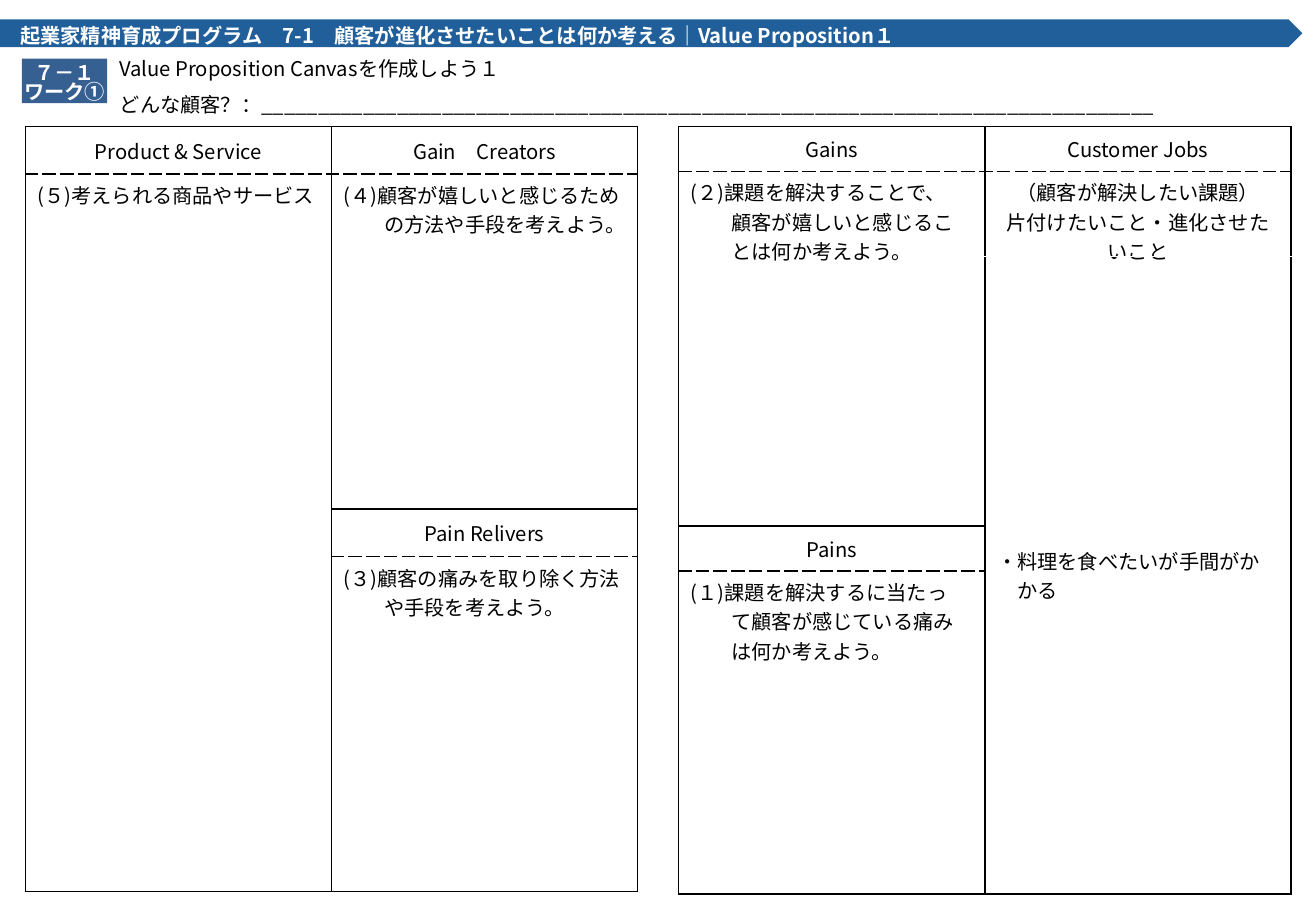
from lxml.etree import SubElement as Sub
from pptx import Presentation
from pptx.dml.color import RGBColor
from pptx.enum.shapes import MSO_SHAPE as Kind
from pptx.enum.text import MSO_ANCHOR as Anchor, PP_ALIGN as Align
from pptx.oxml.ns import qn
from pptx.util import Pt

FONT = "Noto Sans CJK JP"
SIZE = 12
BLACK, WHITE = "000000", "FFFFFF"
SIDES = {"l": "a:lnL", "r": "a:lnR", "t": "a:lnT", "b": "a:lnB"}
SOLID, DASH = "solid", "sysDash"
HEAD = {"l": SOLID, "r": SOLID, "t": SOLID, "b": DASH}
BODY = {"l": SOLID, "r": SOLID, "t": DASH, "b": SOLID}


def paint(item, tone):
    """Give a fill or a font colour its hex tone."""
    item.rgb = RGBColor.from_string(tone)


def write(frame, lines, tone=BLACK, bold=False, align=Align.LEFT, space=None):
    """Fill a frame; each line is a text with its left indent in points."""
    for i, (text, indent) in enumerate(lines):
        para = frame.paragraphs[0] if i == 0 else frame.add_paragraph()
        para.alignment = align
        if space:
            para.line_spacing = space
        if indent:
            props = para._p.get_or_add_pPr()
            props.set("marL", str(Pt(indent)))
            props.set("indent", "0")
        run = para.add_run()
        run.text = text
        run.font.size, run.font.bold, run.font.name = Pt(SIZE), bold, FONT
        paint(run.font.color, tone)
        Sub(run._r.get_or_add_rPr(), qn("a:ea"), typeface=FONT)


def place(shape, box):
    shape.left, shape.top, shape.width, shape.height = map(Pt, box)


def label(slide, kind, box, fill, lines, inset=0, **style):
    """Draw a filled shape with bold white text."""
    shape = slide.shapes.add_shape(kind, *map(Pt, box))
    shape.shadow.inherit = False
    shape.fill.solid()
    paint(shape.fill.fore_color, fill)
    shape.line.fill.background()
    frame = shape.text_frame
    frame.margin_left = Pt(inset)
    frame.margin_right = frame.margin_top = frame.margin_bottom = 0
    frame.vertical_anchor = Anchor.BOTTOM
    write(frame, lines, WHITE, True, **style)
    return frame


def banner(slide, box):
    label(slide, Kind.PENTAGON, box, "215F9A",
          [("起業家精神育成プログラム　7-1　顧客が進化させたいことは何か考える｜Value Proposition１", 0)],
          inset=SIZE)


def intro(slide, box):
    """Place the work badge, the title and the customer line."""
    left, top, width, height = box
    badge = label(slide, Kind.RECTANGLE, (left, top + 1.5, 50.5, 26.5), "376092",
                  [("７－１", 0), ("ワーク①", 0)], align=Align.CENTER, space=Pt(11))
    badge.word_wrap = False
    title = slide.shapes.title
    place(title, (left + 50.5, top, 542, 16.5))
    ask = slide.shapes.add_textbox(0, 0, 0, 0)
    place(ask, (left + 51, top + 20.3, width - 51, height - 20.3))
    for shape, text in ((title, "Value Proposition Canvasを作成しよう１"),
                        (ask, "どんな顧客？：" + "_" * 79)):
        frame = shape.text_frame
        frame.word_wrap = True
        frame.vertical_anchor = Anchor.MIDDLE
        write(frame, [(text, 0)], space=0.9)


def edge(cell, sides):
    """Draw black one-point borders on the named sides."""
    props = cell._tc.get_or_add_tcPr()
    for side, tag in SIDES.items():
        if side in sides:
            line = Sub(props, qn(tag), w=str(Pt(1)))
            fill = Sub(line, qn("a:solidFill"))
            Sub(fill, qn("a:srgbClr"), val=BLACK)
            Sub(line, qn("a:prstDash"), val=sides[side])


def canvas(slide, box, rows, cells):
    """Build a two-column grid of (row, col, span, lines, sides, align)."""
    frame = slide.shapes.add_table(len(rows), 2, *map(Pt, box))
    table = frame.table
    table.first_row = table.horz_banding = False
    for col in table.columns:
        col.width = Pt(box[2] / 2)
    for row, height in zip(table.rows, rows):
        row.height = Pt(height)
    for row, col, span, lines, sides, align in cells:
        cell = table.cell(row, col)
        if span > 1:
            cell.merge(table.cell(row + span - 1, col))
        middle = sides is not BODY
        cell.vertical_anchor = Anchor.MIDDLE if middle else Anchor.TOP
        write(cell.text_frame, lines, align=align)
        edge(cell, sides)
    for cell in table.iter_cells():
        cell.fill.background()


def head(row, col, text):
    return row, col, 1, [(text, 0)], HEAD, Align.CENTER


def body(row, col, span, first, *rest):
    """Describe a prompt whose later lines hang by two letters."""
    lines = [(first, 0)] + [(text, 2 * SIZE) for text in rest]
    return row, col, span, lines, BODY, Align.LEFT


def offer(slide, box):
    rows = [28.1, 198.7] * 2
    canvas(slide, box, rows, [
        head(0, 0, "Product & Service"),
        head(0, 1, "Gain　Creators"),
        body(1, 0, 3, "(５)考えられる商品やサービス"),
        body(1, 1, 1, "(４)顧客が嬉しいと感じるため", "の方法や手段を考えよう。"),
        head(2, 1, "Pain Relivers"),
        body(3, 1, 1, "(３)顧客の痛みを取り除く方法", "や手段を考えよう。"),
    ])


def client(slide, box):
    rows = [26.6, 49.7, 159.8, 26.6, 191.5]
    goal = [("（顧客が解決したい課題）", 0), ("片付けたいこと・進化させたいこと", 0)]
    job = [("・料理を食べたいが手間がか", 0), ("かる", SIZE)]
    upper = {"l": SOLID, "r": SOLID, "t": DASH}
    lower = {"l": SOLID, "r": SOLID, "b": SOLID}
    canvas(slide, box, rows, [
        head(0, 0, "Gains"),
        head(0, 1, "Customer Jobs"),
        body(1, 0, 2, "(２)課題を解決することで、", "顧客が嬉しいと感じるこ", "とは何か考えよう。"),
        (1, 1, 1, goal, upper, Align.CENTER),
        (2, 1, 3, job, lower, Align.LEFT),
        head(3, 0, "Pains"),
        body(4, 0, 1, "(１)課題を解決するに当たっ", "て顧客が感じている痛み", "は何か考えよう。"),
    ])


def main():
    deck = Presentation()
    deck.slide_width, deck.slide_height = Pt(780), Pt(540)
    slide = deck.slides.add_slide(deck.slide_layouts[5])
    banner(slide, (0, 11.5, 772, 16.5))
    intro(slide, (13, 33.2, 751.5, 39))
    client(slide, (402.3, 75, 363, 454.2))
    offer(slide, (15, 75, 363, 453.6))
    deck.save("out.pptx")


if __name__ == "__main__":
    main()
